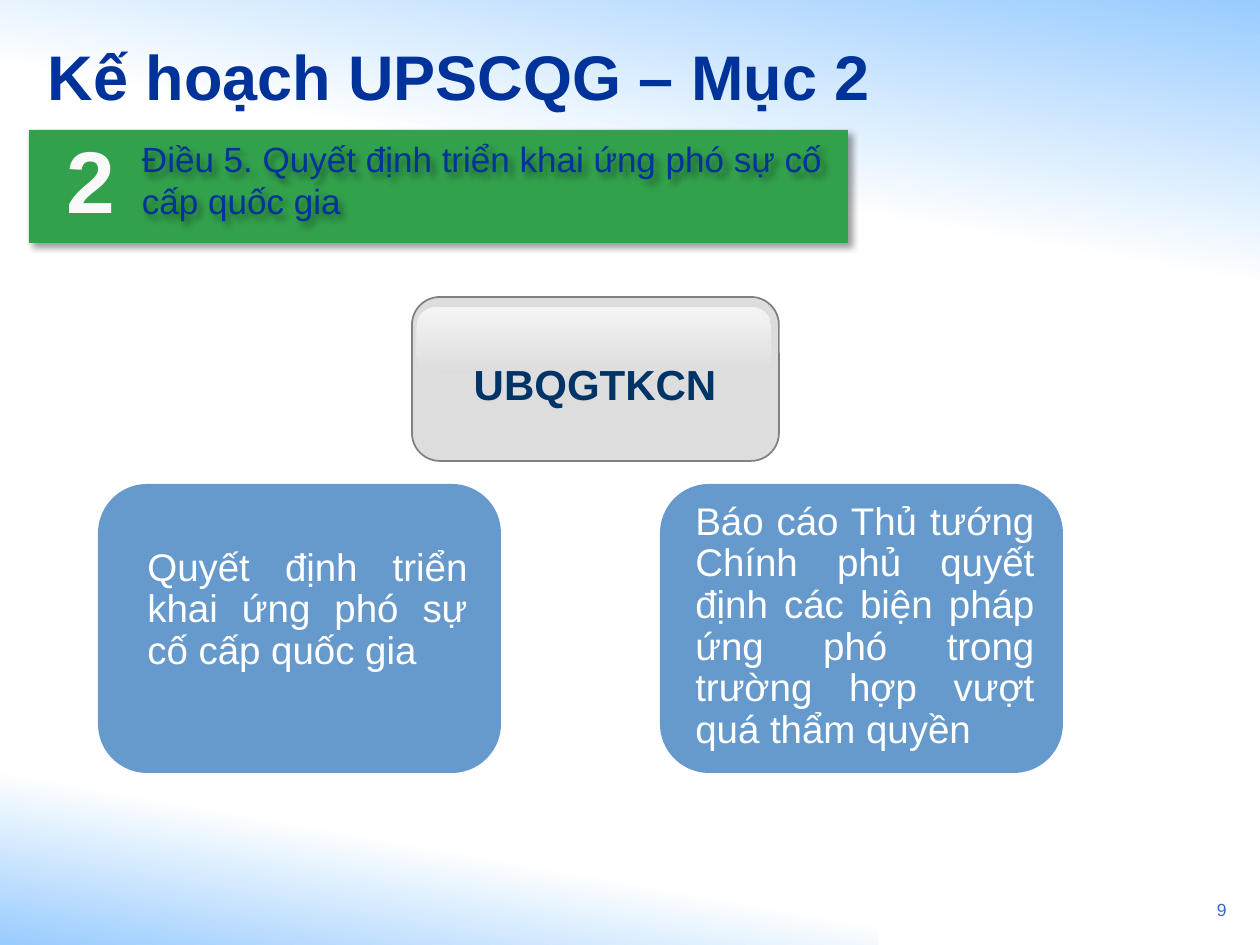
from pptx import Presentation
from pptx.dml.color import RGBColor
from pptx.enum.shapes import MSO_SHAPE as SHAPE
from pptx.enum.text import MSO_ANCHOR as ANCHOR, PP_ALIGN as ALIGN
from pptx.oxml import parse_xml
from pptx.oxml.ns import nsdecls
from pptx.util import Emu, Pt

PX = 914400 // 126
FONT = "Arial"

SKY = RGBColor(0x99, 0xCC, 0xFF)
WHITE = RGBColor(0xFF, 0xFF, 0xFF)
NAVY = RGBColor(0x00, 0x33, 0x99)
DARK_BLUE = RGBColor(0x00, 0x33, 0x66)
PAGE_BLUE = RGBColor(0x33, 0x66, 0xCC)
CARD_BLUE = RGBColor(0x66, 0x99, 0xCC)
GREEN = RGBColor(0x32, 0xA1, 0x4C)
OFF_WHITE = RGBColor(0xF9, 0xF9, 0xF9)
SILVER = RGBColor(0xDD, 0xDD, 0xDD)
GREY = RGBColor(0x80, 0x80, 0x80)

# Content
TITLE = "Kế hoạch UPSCQG – Mục 2"
NUMBER = "2"
ARTICLE = "Điều 5. Quyết định triển khai ứng phó sự cố cấp quốc gia"
AGENCY = "UBQGTKCN"
PAGE = "9"
# Duties: card left, text box (left, top, width, height), text
DUTIES = [
    (98, (72, 542, 408, 139), "Quyết định triển khai ứng phó sự cố cấp quốc gia"),
    (660, (620, 496, 427, 265),
     "Báo cáo Thủ tướng Chính phủ quyết định các biện pháp ứng phó "
     "trong trường hợp vượt quá thẩm quyền"),
]
CARD_TOP, CARD_W, CARD_H = 484, 403, 289


def px(*values):
    return [Emu(v * PX) for v in values]


def add_box(kind, at, color=None, line=None, adj=None):
    s = shapes.add_shape(kind, *px(*at))
    s.shadow.inherit = False
    if color is not None:
        s.fill.solid()
        s.fill.fore_color.rgb = color
    if line is None:
        s.line.fill.background()
    else:
        s.line.color.rgb = line
        s.line.width = Pt(1)
    if adj is not None:
        s.adjustments[0] = adj
    return s


def set_gradient(s, stops, angle):
    """Linear gradient; each stop is (position %, colour, opacity %)."""
    gs = "".join(
        f'<a:gs pos="{pos * 1000}"><a:srgbClr val="{color}">'
        f'<a:alpha val="{alpha * 1000}"/></a:srgbClr></a:gs>'
        for pos, color, alpha in stops)
    s.fill.background()
    spPr = s._element.spPr
    no_fill = spPr.find("{*}noFill")
    spPr.replace(no_fill, parse_xml(
        f'<a:gradFill {nsdecls("a")} rotWithShape="1"><a:gsLst>{gs}</a:gsLst>'
        f'<a:lin ang="{angle * 60000}" scaled="0"/></a:gradFill>'))


def set_shadow(s):
    s.shadow.inherit = False
    s._element.spPr.find("{*}effectLst").append(parse_xml(
        f'<a:outerShdw {nsdecls("a")} blurRad="50800" dist="38100" dir="2700000" '
        'algn="tl" rotWithShape="0"><a:srgbClr val="000000">'
        '<a:alpha val="40000"/></a:srgbClr></a:outerShdw>'))


def set_text(tf, text, size, color, bold=False, align=ALIGN.LEFT):
    tf.word_wrap = True
    p = tf.paragraphs[0]
    p.text = text
    p.alignment = align
    p.font.name = FONT
    p.font.size = Pt(size)
    p.font.bold = bold
    p.font.color.rgb = color
    return p


def add_text(at, *args, **kwargs):
    s = shapes.add_textbox(*px(*at))
    set_text(s.text_frame, *args, **kwargs)
    return s


prs = Presentation()
prs.slide_width, prs.slide_height = px(1260, 945)
slide = prs.slides.add_slide(prs.slide_layouts[5])
shapes = slide.shapes

# Background sweeps: the lower one is the upper one turned around
for at, white_at, flipped in [((0, 731, 878, 214), 48, True),
                              ((0, 0, 1260, 294), 56, False)]:
    s = add_box(SHAPE.RECTANGLE, at)
    set_gradient(s, [(0, SKY, 100), (white_at, WHITE, 100), (100, WHITE, 100)], 100)
    if flipped:
        xfrm = s._element.spPr.xfrm
        xfrm.set("flipH", "1")
        xfrm.set("flipV", "1")

# Title, brought in front of the background
title = shapes.title
shapes._spTree.append(title._element)
title.left, title.top, title.width, title.height = px(35, 16, 932, 118)
title.text_frame.vertical_anchor = ANCHOR.MIDDLE
set_text(title.text_frame, TITLE, 36, NAVY, bold=True)

# Page number
add_text((1168, 893, 71, 40), PAGE, 10, PAGE_BLUE, align=ALIGN.RIGHT)

# Green banner with number and article
set_shadow(add_box(SHAPE.RECTANGLE, (29, 130, 819, 113), GREEN))
s = add_text((117, 125, 732, 111), ARTICLE, 20, NAVY)
tf = s.text_frame
tf.margin_left, tf.margin_right, tf.margin_top, tf.margin_bottom = px(25, 25, 13, 13)
set_shadow(s)
add_text((28, 120, 126, 118), NUMBER, 50, OFF_WHITE, bold=True, align=ALIGN.CENTER)

# Agency button with gloss
add_box(SHAPE.ROUNDED_RECTANGLE, (412, 297, 367, 164), SILVER, GREY, 0.17)
gloss = add_box(SHAPE.ROUNDED_RECTANGLE, (417, 307, 354, 67), adj=0.28)
set_gradient(gloss, [(0, WHITE, 70), (100, SILVER, 70)], 90)
add_text((454, 352, 282, 63), AGENCY, 24, DARK_BLUE, bold=True, align=ALIGN.CENTER)

# Duty cards
for left, text_at, text in DUTIES:
    add_box(SHAPE.ROUNDED_RECTANGLE, (left, CARD_TOP, CARD_W, CARD_H), CARD_BLUE, adj=0.17)
    s = add_text(text_at, text, 22, WHITE, align=ALIGN.JUSTIFY)
    p = s.text_frame.paragraphs[0]
    p.line_spacing = 0.9
    pPr = p._p.get_or_add_pPr()
    pPr.set("marL", "457200")
    pPr.set("indent", "0")

prs.save("out.pptx")
